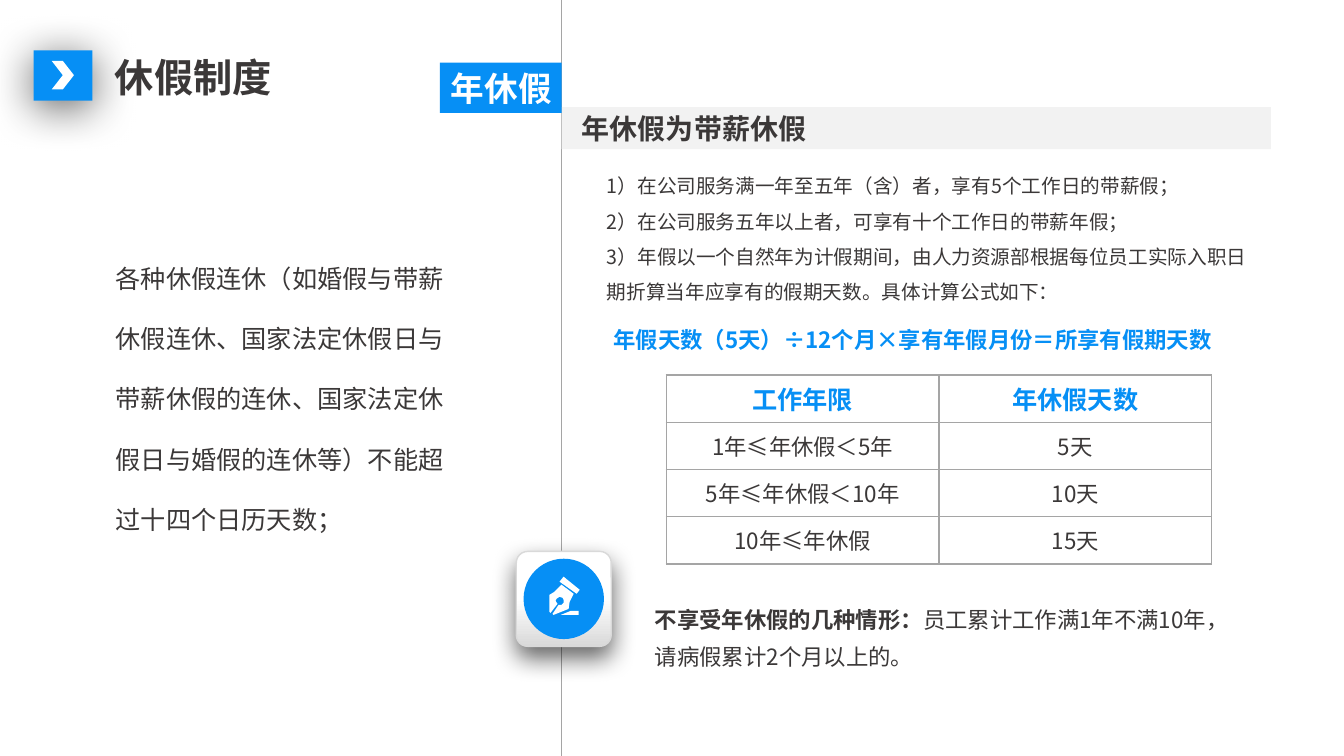
import pptx
import pptx.util
import pptx.dml.color
import pptx.enum.shapes
import pptx.enum.text
import pptx.oxml
import pptx.oxml.ns
from lxml import etree

RGB = pptx.dml.color.RGBColor
BLUE = RGB(0x06, 0x8F, 0xF5)
DARK = RGB(0x3B, 0x38, 0x38)
GREY = RGB(0xA5, 0xA5, 0xA5)
PALE = RGB(0xF2, 0xF2, 0xF2)
EDGE = RGB(0xD9, 0xD9, 0xD9)
WHITE = RGB(0xFF, 0xFF, 0xFF)
FONT = "Noto Sans CJK SC"

SHAPE = pptx.enum.shapes.MSO_SHAPE
ALIGN = pptx.enum.text.PP_ALIGN
ANCHOR = pptx.enum.text.MSO_ANCHOR
qn = pptx.oxml.ns.qn

# The slide is a grid of 160 columns by 90 rows of square cells
WIDTH = pptx.util.Inches(13.33)
HEIGHT = pptx.util.Inches(7.5)
CELL = HEIGHT / 90

# Pen nib outlines, in hundredths of an inch from the nib's corner
NIB = [
    [(1, 36), (0, 35), (0, 18), (5, 15), (9, 11), (12, 8), (24, 17),
     (20, 25), (19, 32), (4, 38), (3, 37), (9, 28), (12, 28), (14, 26),
     (14, 23), (13, 21), (10, 20), (7, 22), (6, 24), (8, 27)],
    [(11, 38), (29, 38), (29, 34), (21, 34)],
    [(27, 17), (30, 13), (14, 0), (10, 5)],
]


def at(box, x, y, w, h):
    """Lengths on the slide for a part at grid offset x, y in a box."""
    return [round(v * CELL) for v in (box[0] + x, box[1] + y, w, h)]


def write(p, text, size=16, color=DARK, bold=False, align=None, spacing=None,
          after=None):
    r = p.add_run()
    r.text = text
    r.font.size = pptx.util.Pt(size)
    r.font.bold = bold
    r.font.color.rgb = color
    r.font.name = FONT
    etree.SubElement(r.font._element, qn("a:ea"), typeface=FONT)
    if align is not None:
        p.alignment = align
    if spacing is not None:
        p.line_spacing = spacing
    if after is not None:
        p.space_after = pptx.util.Pt(after)


def add_text(s, place, lines, wrap=True, inset=None, **fmt):
    tf = s.shapes.add_textbox(*place).text_frame
    tf.word_wrap = wrap
    if inset is not None:
        tf.margin_left = tf.margin_right = inset
        tf.margin_top = tf.margin_bottom = inset
    for i, line in enumerate(lines):
        write(tf.add_paragraph() if i else tf.paragraphs[0], line, **fmt)
    return tf


def add_block(s, kind, place, fill=None, line=None):
    sp = s.shapes.add_shape(kind, *place)
    sp.shadow.inherit = False
    if fill is not None:
        sp.fill.solid()
        sp.fill.fore_color.rgb = fill
    if line is None:
        sp.line.fill.background()
    else:
        sp.line.color.rgb = line
        sp.line.width = pptx.util.Pt(1)
    return sp


def drop_shadow(sp, alpha, blur, dist):
    effects = sp._element.spPr.find(qn("a:effectLst"))
    shadow = etree.SubElement(
        effects, qn("a:outerShdw"), blurRad=str(pptx.util.Pt(blur)),
        dist=str(pptx.util.Pt(dist)), dir="5400000", algn="t", rotWithShape="0")
    color = etree.SubElement(shadow, qn("a:srgbClr"), val="000000")
    etree.SubElement(color, qn("a:alpha"), val=str(alpha * 1000))


def header(s, box):
    tile = add_block(s, SHAPE.RECTANGLE, at(box, 0, 0, 7, 6), BLUE)
    drop_shadow(tile, 62, 32, 5)
    add_block(s, SHAPE.CHEVRON, at(box, 2.15, 1.25, 2.65, 3.4), WHITE)
    add_text(s, at(box, 8.5, 0.35, 21.2, 6.4), ["休假制度"], wrap=False,
             size=28, bold=True, spacing=0.9)


def divider(s, box):
    x, y, w, h = at(box, 0, 0, 0, 90)
    line = s.shapes.add_connector(
        pptx.enum.shapes.MSO_CONNECTOR.STRAIGHT, x, y, x, y + h)
    line.line.color.rgb = GREY
    line.line.width = pptx.util.Pt(1)
    etree.SubElement(line._element.spPr, qn("a:effectLst"))


def general_rule(s, box):
    add_text(s, at(box, 0, 0, 44.2, 37.6),
             ["各种休假连休（如婚假与带薪休假连休、国家法定休假日与带薪休假的连休、"
              "国家法定休假日与婚假的连休等）不能超过十四个日历天数；"],
             size=18, spacing=2, after=12)


def annual_leave(s, box):
    # Heading band and the tag on its left
    band = add_block(s, SHAPE.RECTANGLE, at(box, 0, 5.3, 84.4, 5), PALE)
    tf = band.text_frame
    tf.vertical_anchor = ANCHOR.TOP
    tf.margin_left = pptx.util.Inches(0.2)
    tf.margin_top = tf.margin_bottom = pptx.util.Inches(0.04)
    write(tf.paragraphs[0], "年休假为带薪休假", size=20, bold=True,
          align=ALIGN.LEFT)
    tag = add_block(s, SHAPE.RECTANGLE, at(box, -14.5, 0, 14.5, 6), BLUE)
    tf = tag.text_frame
    tf.word_wrap = False
    tf.vertical_anchor = ANCHOR.TOP
    write(tf.paragraphs[0], "年休假", size=24, color=WHITE, bold=True,
          align=ALIGN.RIGHT)

    # Rules and formula
    add_text(s, at(box, 4.2, 11.3, 80, 18.1),
             ["1）在公司服务满一年至五年（含）者，享有5个工作日的带薪假；",
              "2）在公司服务五年以上者，可享有十个工作日的带薪年假；",
              "3）年假以一个自然年为计假期间，由人力资源部根据每位员工实际入职日期"
              "折算当年应享有的假期天数。具体计算公式如下："],
             size=14, spacing=1.5)
    add_text(s, at(box, 5, 30.8, 75.6, 4.4),
             ["年假天数（5天）÷12个月×享有年假月份＝所享有假期天数"],
             color=BLUE, bold=True)

    leave_table(s, at(box, 12.45, 37.2, 64.9, 22.5))

    # Exceptions
    tf = add_text(s, at(box, 11.1, 63.4, 69, 9), ["不享受年休假的几种情形："],
                  inset=0, bold=True, spacing=1.4)
    write(tf.paragraphs[0],
          "员工累计工作满1年不满10年，请病假累计2个月以上的。")


def leave_table(s, place):
    rows = [("工作年限", "年休假天数"), ("1年≤年休假＜5年", "5天"),
            ("5年≤年休假＜10年", "10天"), ("10年≤年休假", "15天")]
    table = s.shapes.add_table(len(rows), 2, *place).table
    table.first_row = table.horz_banding = False
    for i, row in enumerate(rows):
        for j, text in enumerate(row):
            cell = table.cell(i, j)
            cell.fill.background()
            cell.vertical_anchor = ANCHOR.MIDDLE
            cell.margin_left = cell.margin_right = pptx.util.Inches(0.13)
            write(cell.text_frame.paragraphs[0], text, size=16 if i else 18,
                  color=DARK if i else BLUE, bold=i == 0,
                  align=ALIGN.CENTER, spacing=0.95)
            border(cell)


def border(cell):
    tcPr = cell._tc.get_or_add_tcPr()
    for k, side in enumerate(("lnL", "lnR", "lnT", "lnB")):
        ln = etree.Element(qn("a:" + side), w=str(pptx.util.Pt(1)))
        fill = etree.SubElement(ln, qn("a:solidFill"))
        etree.SubElement(fill, qn("a:srgbClr"), val=str(GREY))
        tcPr.insert(k, ln)


def pen_badge(s, box):
    plate = add_block(s, SHAPE.ROUNDED_RECTANGLE, at(box, 0, 0, 11.3, 11.3),
                      line=EDGE)
    plate.adjustments[0] = 0.12
    plate.fill.gradient()
    plate.fill.gradient_angle = 90
    stops = plate.fill.gradient_stops
    for stop, position, color in zip(stops, (0, 0.5), (EDGE, WHITE)):
        stop.position = position
        stop.color.rgb = color
    drop_shadow(plate, 60, 18, 8)
    add_block(s, SHAPE.OVAL, at(box, 0.95, 0.95, 9.4, 9.4), BLUE, BLUE)

    # Pen nib
    x, y = at(box, 3.95, 3, 0, 0)[:2]
    pen = s.shapes.build_freeform(*NIB[0][0], scale=pptx.util.Inches(0.01))
    for i, outline in enumerate(NIB):
        if i:
            pen.move_to(*outline[0])
        pen.add_line_segments(outline[1:], close=True)
    nib = pen.convert_to_shape(x, y)
    nib.shadow.inherit = False
    nib.fill.solid()
    nib.fill.fore_color.rgb = WHITE
    nib.line.fill.background()


def main():
    prs = pptx.Presentation()
    prs.slide_width, prs.slide_height = WIDTH, HEIGHT
    s = prs.slides.add_slide(prs.slide_layouts[6])
    header(s, (4, 6))
    divider(s, (66.85, 0))
    general_rule(s, (12.6, 27.1))
    annual_leave(s, (66.85, 7.45))
    pen_badge(s, (61.45, 65.65))
    prs.save("out.pptx")


if __name__ == "__main__":
    main()
